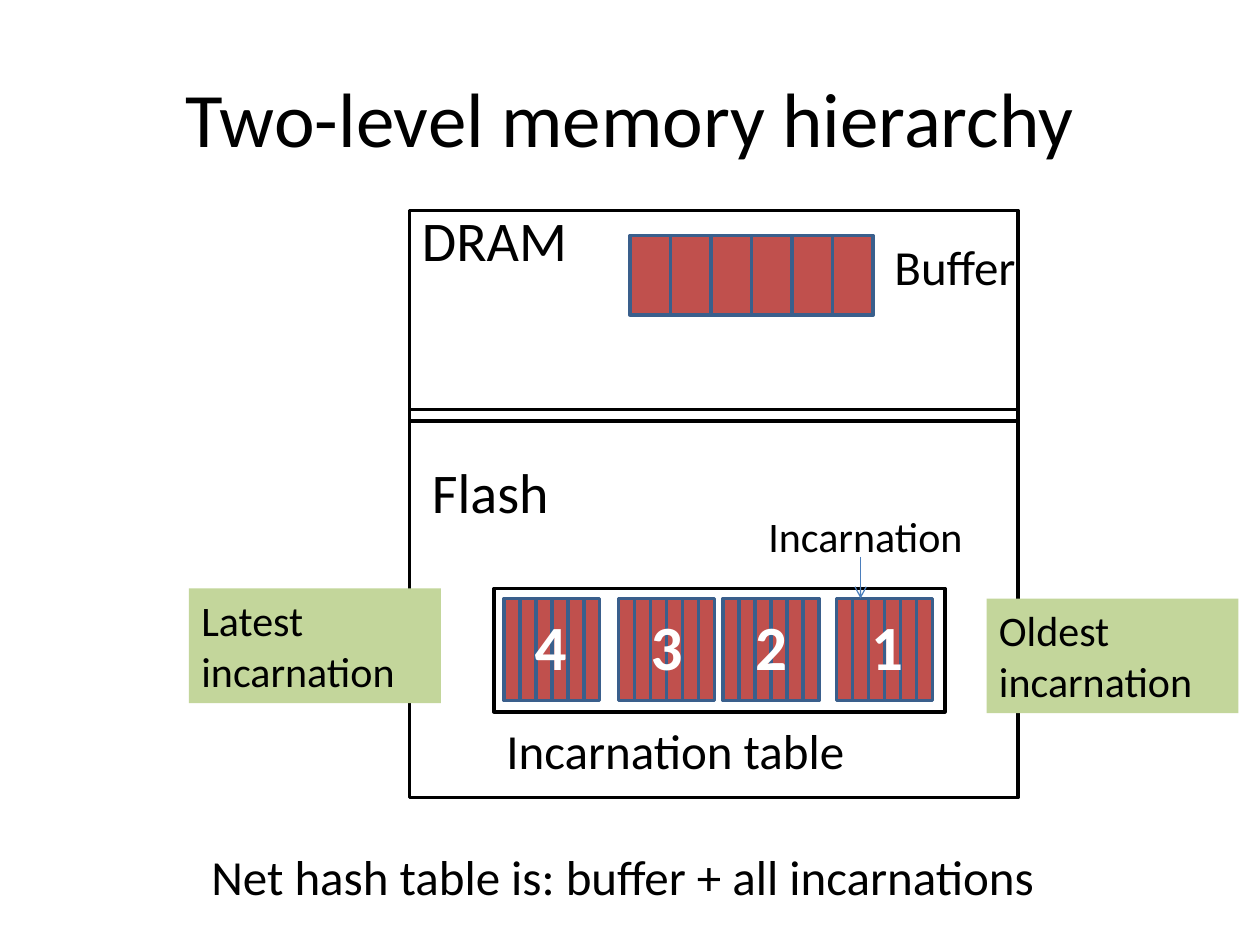
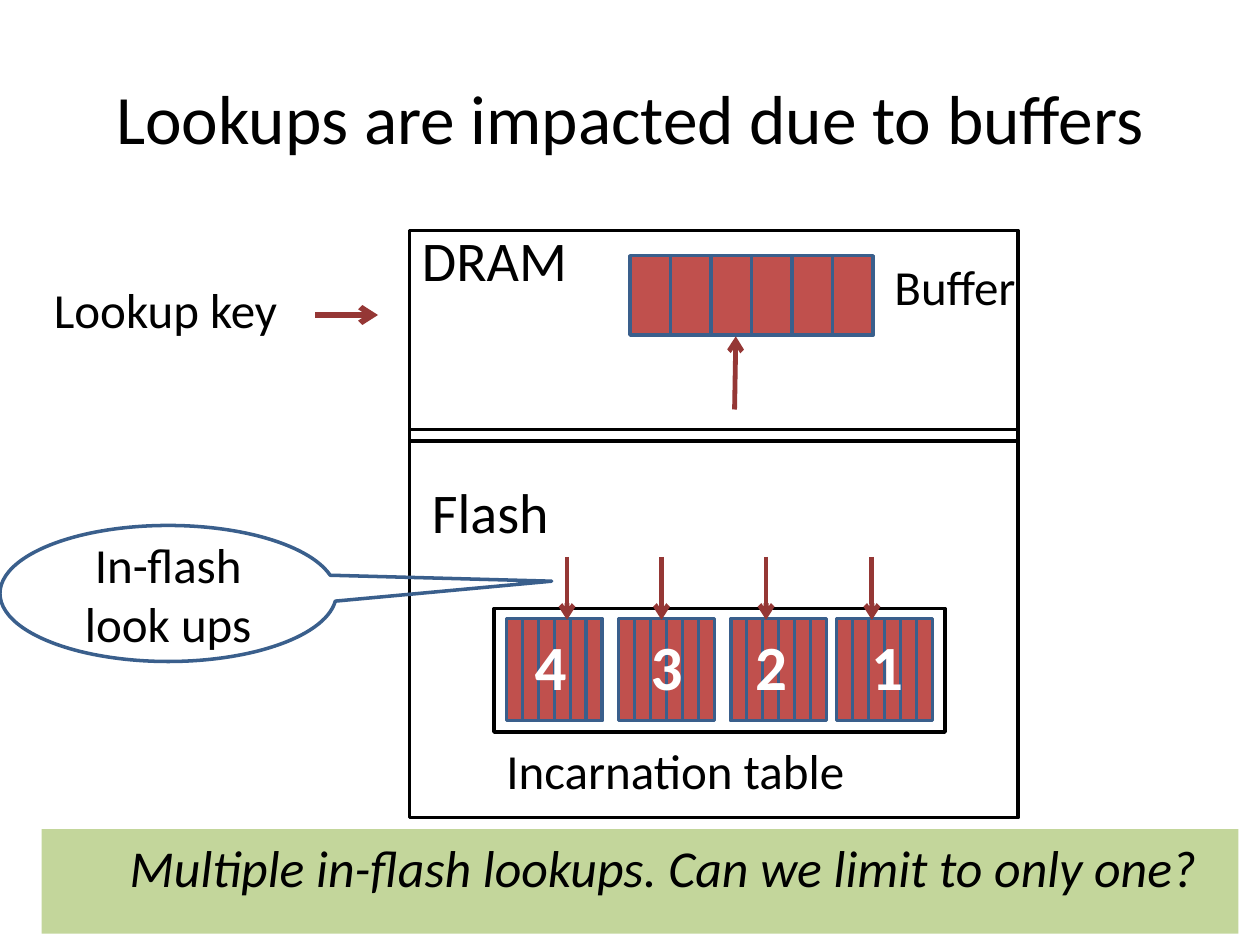
"""Build two slides on a hash table split between DRAM and flash."""
from dataclasses import dataclass

from lxml.etree import SubElement
from pptx import Presentation
from pptx.dml.color import RGBColor as RGB
from pptx.enum.shapes import MSO_CONNECTOR as CONN, MSO_SHAPE as SHAPE
from pptx.enum.text import MSO_ANCHOR as ANCHOR, PP_ALIGN as ALIGN
from pptx.oxml.ns import qn
from pptx.util import Inches, Pt


@dataclass(frozen=True)
class Theme:
    font: str = "Calibri"
    ink: str = "000000"
    white: str = "FFFFFF"
    cell: str = "C0504D"
    edge: str = "3A5F8C"
    note: str = "C3D69B"
    pointer: str = "4B7EBC"
    probe: str = "953735"
    title: float = 44
    long_title: float = 39.6
    number: float = 36
    level: float = 32
    banner: float = 29.6
    label: float = 28
    small: float = 24
    outline: float = 2


class Deck:
    def __init__(self, prs, theme):
        self.prs, self.theme, self.s = prs, theme, None

    def new_slide(self, title, size):
        self.s = self.prs.slides.add_slide(self.prs.slide_layouts[6])
        self.text(title, 0.5, 0.3, 9, 1.25, size,
                  align=ALIGN.CENTER, anchor=ANCHOR.MIDDLE)

    def fill_text(self, sp, text, size, color=None, align=ALIGN.LEFT,
                  anchor=ANCHOR.TOP, **font):
        tf = sp.text_frame
        p = tf.paragraphs[0]
        r = p.add_run()
        r.text = text
        frame = {"word_wrap": True, "vertical_anchor": anchor}
        style = {"name": self.theme.font, "size": Pt(size), **font}
        for obj, values in ((tf, frame), (p, {"alignment": align}), (r.font, style)):
            for name, value in values.items():
                setattr(obj, name, value)
        r.font.color.rgb = RGB.from_string(color or self.theme.ink)
        return p

    def text(self, text, x, y, w, h, size, **style):
        box = self.s.shapes.add_textbox(*map(Inches, (x, y, w, h)))
        return self.fill_text(box, text, size, **style)

    def shape(self, x, y, w, h, fill=None, line=None, kind=SHAPE.RECTANGLE, parent=None):
        shapes = (parent or self.s).shapes
        sp = shapes.add_shape(kind, *map(Inches, (x, y, w, h)))
        sp.shadow.inherit = False
        if fill:
            sp.fill.solid()
            sp.fill.fore_color.rgb = RGB.from_string(fill)
        else:
            sp.fill.background()
        if line:
            sp.line.color.rgb = RGB.from_string(line)
            sp.line.width = Pt(self.theme.outline)
        else:
            sp.line.fill.background()
        return sp

    def note(self, text, x, y, w, h, size, **style):
        sp = self.shape(x, y, w, h, self.theme.note)
        return self.fill_text(sp, text, size, **style)

    def arrow(self, x1, y1, x2, y2, color, width):
        c = self.s.shapes.add_connector(CONN.STRAIGHT, *map(Inches, (x1, y1, x2, y2)))
        c.line.color.rgb = RGB.from_string(color)
        c.line.width = Pt(width)
        props = c._element.spPr
        SubElement(props.find(qn("a:ln")), qn("a:tailEnd"), type="arrow")
        SubElement(props, qn("a:effectLst"))

    def cells(self, x, y, w, h, count=6):
        group = self.s.shapes.add_group_shape()
        step = w / count
        for i in range(count):
            self.shape(x + i * step, y, step, h, self.theme.cell, self.theme.edge,
                       parent=group)

    def memory(self, top, block_lefts):
        t = self.theme
        for y, h in ((0, 1.67), (1.58, 3.08)):
            self.shape(3.25, top + y, 4.83, h, line=t.ink)
        for text, x, y, w, h, size in (
                ("DRAM", 3.25, -0.09, 1.83, 0.64, t.level),
                ("Flash", 3.33, 1.91, 1.83, 0.64, t.level),
                ("Buffer", 7, 0.16, 1.42, 0.57, t.label),
                ("Incarnation table", 3.92, 4, 3.67, 0.57, t.label)):
            self.text(text, x, top + y, w, h, size)
        self.cells(5, top + 0.2, 1.93, 0.63)
        self.shape(3.92, top + 3, 3.58, 0.98, line=t.ink)
        for x in block_lefts:
            self.cells(x, top + 3.08, 0.76, 0.81)

    def numbers(self, top):
        for text, x in zip("4321", (3.83, 4.75, 5.58, 6.5)):
            self.text(text, x, top + 2.91, 1.08, 1.08, self.theme.number,
                      color=self.theme.white, align=ALIGN.CENTER,
                      anchor=ANCHOR.MIDDLE, bold=True)


def hierarchy_slide(deck):
    t, top = deck.theme, 1.67
    deck.new_slide("Two-level memory hierarchy", t.title)
    deck.memory(top, (4, 4.91, 5.74, 6.64))
    deck.text("Incarnation", 6, 4, 1.83, 0.5, t.small)
    deck.arrow(6.83, 4.42, 6.83, 4.75, t.pointer, 0.75)
    deck.numbers(top)
    deck.text("Net hash table is: buffer + all incarnations",
              1.58, 6.67, 7.83, 0.57, t.label)
    deck.note("Oldest incarnation", 7.83, 4.75, 2, 0.91, t.small)
    deck.note("Latest incarnation", 1.5, 4.67, 2, 0.91, t.small)


def lookup_slide(deck):
    t, top = deck.theme, 1.83
    deck.new_slide("Lookups are impacted due to buffers", t.long_title)
    deck.memory(top, (4.02, 4.91, 5.8, 6.64))
    deck.text("Lookup key", 0.33, 2.17, 2.17, 0.57, t.label)
    deck.arrow(2.5, 2.5, 3, 2.5, t.probe, 3.25)
    deck.arrow(5.83, 3.25, 5.84, 2.67, t.probe, 2.75)
    for x in (4.5, 5.25, 6.08, 6.92):
        deck.arrow(x, 4.42, x, 4.92, t.probe, 2.75)
    callout = deck.shape(0, 4.17, 2.67, 1.08, line=t.edge, kind=SHAPE.OVAL_CALLOUT)
    callout.adjustments[0], callout.adjustments[1] = 1.14, -0.09
    deck.fill_text(callout, "In-flash look ups", t.label,
                   align=ALIGN.CENTER, anchor=ANCHOR.MIDDLE)
    p = deck.note("Multiple in-flash lookups. Can we limit to only one?",
                  0.33, 6.58, 9.5, 0.83, t.banner, align=ALIGN.CENTER, italic=True)
    p.space_before = Pt(6)
    p._p.get_or_add_pPr().set("marL", str(Inches(0.38)))
    deck.numbers(top)


def main():
    prs = Presentation()
    prs.slide_width, prs.slide_height = Inches(10), Inches(7.5)
    deck = Deck(prs, Theme())
    hierarchy_slide(deck)
    lookup_slide(deck)
    prs.save("out.pptx")


if __name__ == "__main__":
    main()
